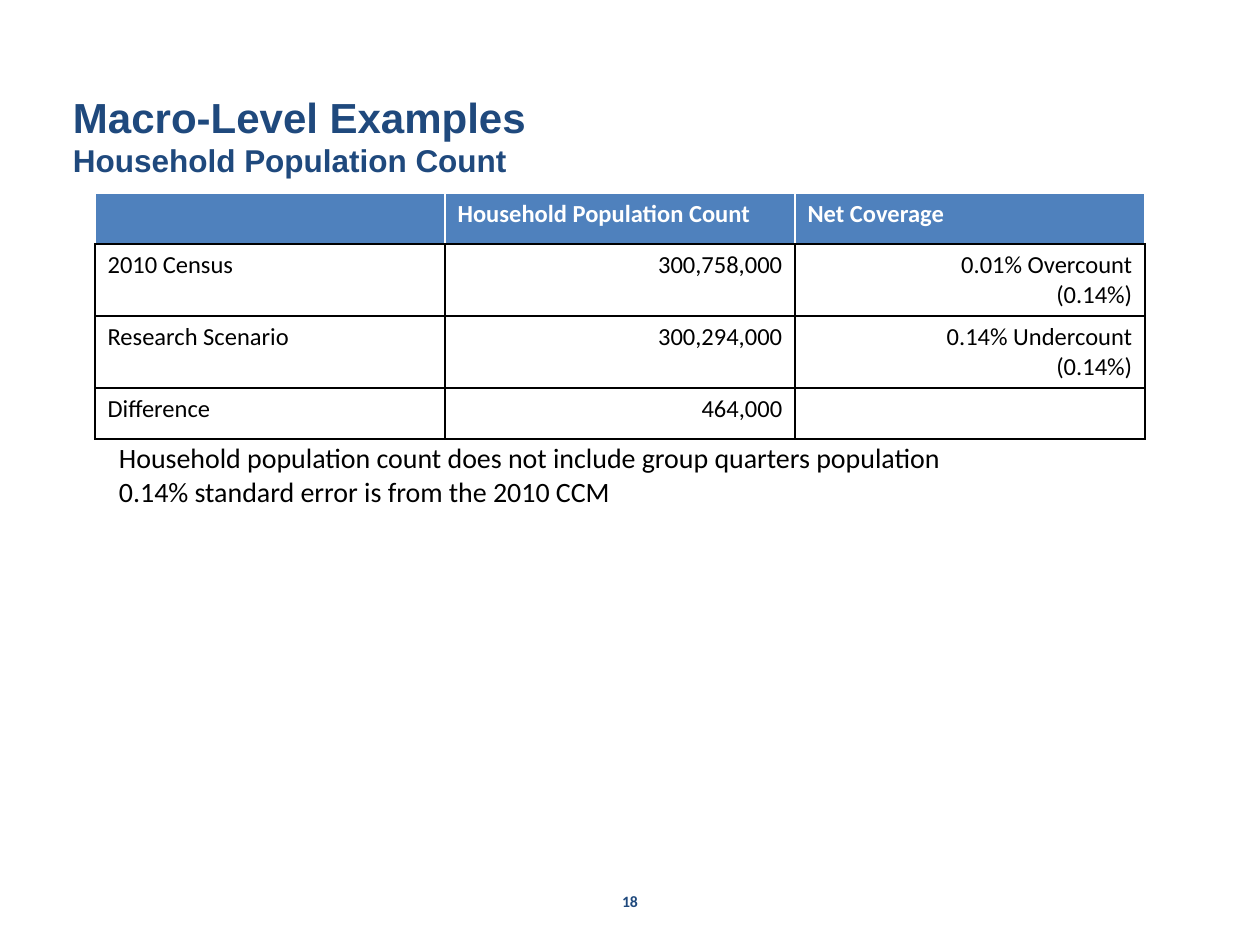
import pptx
import pptx.dml.color
import pptx.enum.text
import pptx.oxml.ns
import pptx.util
from lxml import etree

PX = 914400 // 126
COLORS = {"navy": "1F497D", "blue": "4F81BD", "white": "FFFFFF", "black": "000000"}
ALIGN = pptx.enum.text.PP_ALIGN
ANCHOR = pptx.enum.text.MSO_ANCHOR

HEADER = ["", "Household Population Count", "Net Coverage"]
ROWS = [
    ["2010 Census", "300,758,000", "0.01% Overcount\n(0.14%)"],
    ["Research Scenario", "300,294,000", "0.14% Undercount\n(0.14%)"],
    ["Difference", "464,000", ""],
]
ROW_HEIGHTS = [51, 72, 72, 51]
COLUMN_WIDTH = 350


def px(n):
    return pptx.util.Emu(n * PX)


def rgb(name):
    return pptx.dml.color.RGBColor.from_string(COLORS[name])


def write(p, text, size=14, font="Calibri", color="black", bold=False, align=ALIGN.LEFT):
    """Add one formatted run to a paragraph."""
    p.alignment = align
    r = p.add_run()
    r.text = text
    r.font.size = pptx.util.Pt(size)
    r.font.name = font
    r.font.bold = bold
    r.font.color.rgb = rgb(color)


def add_text(s, left, top, width, height, lines, anchor=ANCHOR.TOP):
    """Add a text box; each line is a pair of text and its format."""
    tf = s.shapes.add_textbox(px(left), px(top), px(width), px(height)).text_frame
    tf.word_wrap = True
    tf.vertical_anchor = anchor
    tf.margin_left = tf.margin_right = px(10)
    tf.margin_top = tf.margin_bottom = px(5)
    for i, (text, style) in enumerate(lines):
        p = tf.add_paragraph() if i else tf.paragraphs[0]
        write(p, text, **style)


def set_borders(cell, **sides):
    """Draw 1 pt cell borders; sides map L, R, T, B to colour names."""
    tc_pr = cell._tc.get_or_add_tcPr()
    qn = pptx.oxml.ns.qn
    for side, color in sides.items():
        ln = etree.SubElement(tc_pr, qn(f"a:ln{side}"), w=str(pptx.util.Pt(1)))
        fill = etree.SubElement(ln, qn("a:solidFill"))
        etree.SubElement(fill, qn("a:srgbClr"), val=COLORS[color])


def fill_cell(cell, text, fill, edge, **style):
    set_borders(cell, L=edge, R=edge, T=edge, B="black")
    cell.fill.solid()
    cell.fill.fore_color.rgb = rgb(fill)
    tf = cell.text_frame
    for i, line in enumerate(text.split("\n") if text else []):
        p = tf.add_paragraph() if i else tf.paragraphs[0]
        write(p, line, **style)


def add_coverage_table(s, left, top):
    data = [HEADER] + ROWS
    table = s.shapes.add_table(
        len(data), len(HEADER), px(left), px(top),
        px(COLUMN_WIDTH * len(HEADER)), px(sum(ROW_HEIGHTS))).table
    for column in table.columns:
        column.width = px(COLUMN_WIDTH)
    for i, (values, height) in enumerate(zip(data, ROW_HEIGHTS)):
        table.rows[i].height = px(height)
        for j, text in enumerate(values):
            cell = table.cell(i, j)
            if i == 0:
                fill_cell(cell, text, "blue", "white", color="white", bold=True)
            else:
                fill_cell(cell, text, "white", "black",
                          align=ALIGN.RIGHT if j else ALIGN.LEFT)


def main():
    prs = pptx.Presentation()
    prs.slide_width, prs.slide_height = px(1260), px(945)
    s = prs.slides.add_slide(prs.slide_layouts[6])
    title = {"font": "Arial", "color": "navy", "bold": True}
    add_text(s, 63, 86, 1134, 157, [
        ("Macro-Level Examples", {"size": 24, **title}),
        ("Household Population Count", {"size": 18, **title}),
    ])
    add_text(s, 109, 436, 1098, 352, [
        ("Household population count does not include group quarters population", {"size": 16}),
        ("0.14% standard error is from the 2010 CCM", {"size": 16}),
    ])
    add_coverage_table(s, 95, 193)
    add_text(s, 483, 876, 294, 50, [
        ("18", {"size": 9, "color": "navy", "bold": True, "align": ALIGN.CENTER}),
    ], anchor=ANCHOR.MIDDLE)
    prs.save("out.pptx")


if __name__ == "__main__":
    main()
